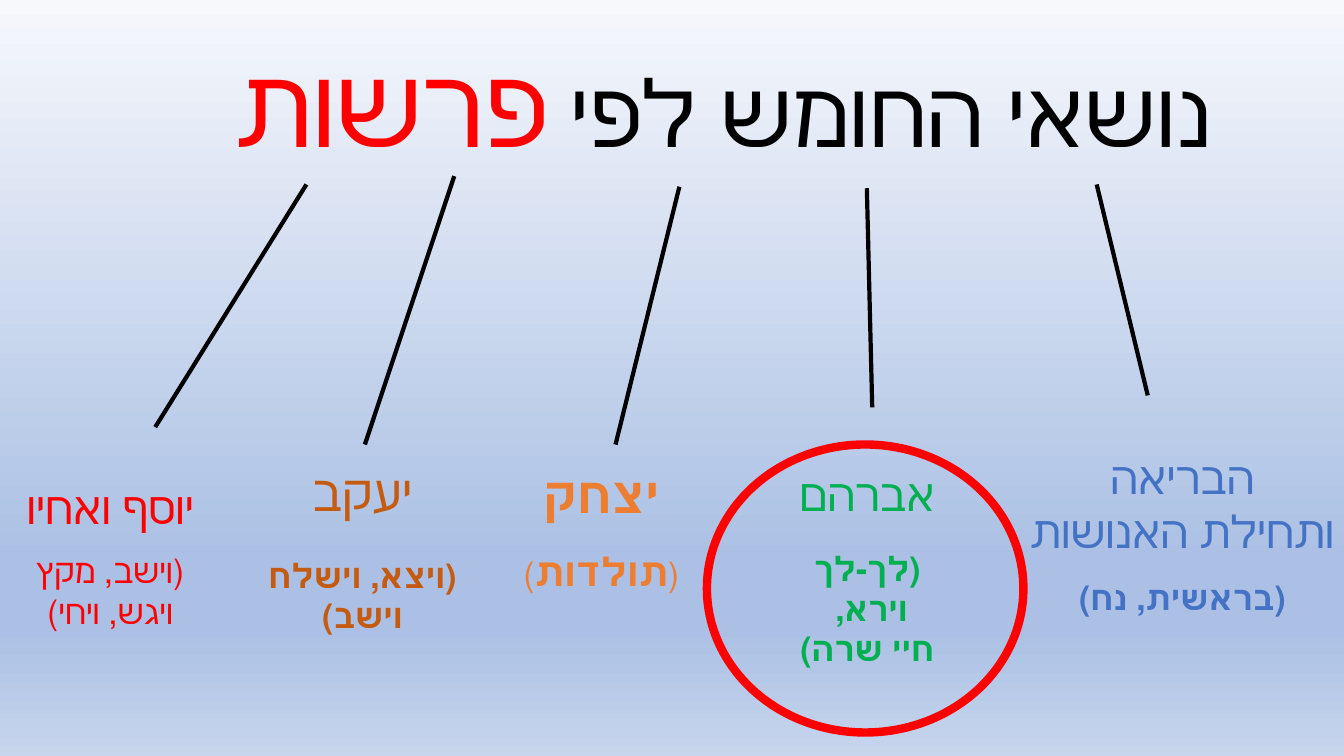
from dataclasses import dataclass

from lxml.etree import SubElement
from pptx import Presentation
from pptx.dml.color import RGBColor
from pptx.enum.lang import MSO_LANGUAGE_ID
from pptx.enum.shapes import MSO_CONNECTOR, MSO_SHAPE
from pptx.enum.text import MSO_AUTO_SIZE, PP_ALIGN
from pptx.oxml.ns import qn
from pptx.util import Inches, Pt

WIDTH, HEIGHT = Inches(13.333), Inches(7.5)
RED, BLACK = "FF0000", "000000"
INSET = 3.6


@dataclass
class Span:
    text: str
    size: float
    color: str
    bold: bool = False


@dataclass
class Line:
    spans: list[Span]
    gap: float = 0


@dataclass
class TextBlock:
    area: tuple[float, float, float, float]
    lines: list[Line]
    font: str = "Lato"
    lead: float = 0


@dataclass
class Ray:
    start: tuple[float, float]
    end: tuple[float, float]


def across(percent: float) -> int:
    """Turn a share of the slide's width into a length."""
    return round(WIDTH * percent / 100)


def down(percent: float) -> int:
    """Turn a share of the slide's height into a length."""
    return round(HEIGHT * percent / 100)


def place(area: tuple[float, float, float, float]) -> tuple[int, int, int, int]:
    """Turn left, top, width and height shares into lengths."""
    left, top, width, height = area
    return across(left), down(top), across(width), down(height)


def color(value: str) -> RGBColor:
    """Read a hex colour."""
    return RGBColor.from_string(value)


def line(text: str, size: float, tint: str, bold: bool = False, gap: float = 0) -> Line:
    """Make a line with a single span."""
    return Line([Span(text, size, tint, bold)], gap)


def paint_background(page, stops: list[tuple[int, str]]) -> None:
    """Fill the page with a vertical gradient."""
    fill = page.background.fill
    fill.gradient()
    fill.gradient_angle = 270
    stop_list = page.background._cSld.find(".//" + qn("a:gsLst"))
    stop_list.clear()
    for percent, tint in stops:
        stop = SubElement(stop_list, qn("a:gs"), pos=str(percent * 1000))
        SubElement(stop, qn("a:srgbClr"), val=str(color(tint)))


def add_text(page, block: TextBlock) -> None:
    """Draw a centred right-to-left text block."""
    box = page.shapes.add_textbox(*place(block.area))
    frame = box.text_frame
    frame.word_wrap = True
    frame.auto_size = MSO_AUTO_SIZE.SHAPE_TO_FIT_TEXT
    frame.margin_top = Pt(INSET + block.lead)
    frame.text = "\n".join("" for _ in block.lines)
    for para, content in zip(frame.paragraphs, block.lines):
        para.alignment = PP_ALIGN.CENTER
        para._p.get_or_add_pPr().set("rtl", "1")
        if content.gap:
            para.space_before = Pt(content.gap)
        for span in content.spans:
            run = para.add_run()
            run.text = span.text
            run.font.name = block.font
            run.font.size = Pt(span.size)
            run.font.bold = span.bold
            run.font.color.rgb = color(span.color)
            run.font.language_id = MSO_LANGUAGE_ID.HEBREW


def add_ray(page, ray: Ray) -> None:
    """Draw a line from the title towards a topic."""
    connector = page.shapes.add_connector(
        MSO_CONNECTOR.STRAIGHT,
        across(ray.start[0]), down(ray.start[1]), across(ray.end[0]), down(ray.end[1]))
    connector.line.color.rgb = color(BLACK)
    connector.line.width = Pt(3)
    SubElement(connector._element.spPr, qn("a:effectLst"))


def add_ring(page, area: tuple[float, float, float, float]) -> None:
    """Draw the red ring around a topic."""
    ring = page.shapes.add_shape(MSO_SHAPE.OVAL, *place(area))
    ring.shadow.inherit = False
    ring.fill.background()
    ring.line.color.rgb = color(RED)
    ring.line.width = Pt(6)


BLUE, ORANGE, GREEN, BROWN = "4472C4", "ED7D31", "00B050", "C55A11"

BACKGROUND = [(0, "F6F8FC"), (74, "ABC0E4"), (83, "ABC0E4"), (100, "C7D5ED")]

BLOCKS = [
    TextBlock((74.85, 58.8, 26.25, 24.4), [
        line(" הבריאה ", 32, BLUE),
        line("ותחילת האנושות", 32, BLUE),
        line("(בראשית, נח)", 24, BLUE, True, 14.4)]),
    TextBlock((35.55, 55.3, 18.4, 24.3), [
        line("יצחק", 36, ORANGE, True),
        Line([Span("(", 24, ORANGE), Span("תולדות", 28, ORANGE, True),
              Span(")", 24, ORANGE)], 16.8)], lead=28.8),
    TextBlock((51.4, 55.3, 26.25, 34.1), [
        line("אברהם", 32, GREEN),
        line("(לך-לך", 24, GREEN, True, 19.2),
        line("וירא, ", 24, GREEN, True),
        line("חיי שרה)", 24, GREEN, True)], lead=31.2),
    TextBlock((17, 52.3, 19.95, 27.3), [
        line("יעקב", 36, BROWN),
        line("(ויצא, וישלח וישב)", 24, BROWN, True, 24)], lead=43.2),
    TextBlock((-1, 62.8, 18.4, 21.6), [
        line("יוסף ואחיו", 32, RED),
        line("(וישב, מקץ", 24, RED, gap=12),
        line("ויגש, ויחי)", 24, RED)]),
    TextBlock((7.9, 4, 90.1, 19.3), [
        Line([Span("נושאי החומש לפי ", 66, BLACK), Span("פרשות", 80, RED),
              Span(" ", 66, BLACK)])],
        font="Calibri"),
]

RAYS = [
    Ray((81.6, 24.4), (85.4, 52.3)),
    Ray((64.5, 24.9), (64.9, 53.9)),
    Ray((50.55, 24.7), (45.8, 58.8)),
    Ray((33.8, 23.3), (27.15, 58.8)),
    Ray((22.8, 24.4), (11.55, 56.5)),
]


def main() -> None:
    """Build the slide and save it."""
    deck = Presentation()
    deck.slide_width, deck.slide_height = WIDTH, HEIGHT
    page = deck.slides.add_slide(deck.slide_layouts[6])
    paint_background(page, BACKGROUND)
    for block in BLOCKS:
        add_text(page, block)
    for ray in RAYS:
        add_ray(page, ray)
    add_ring(page, (52.6, 58.8, 23.55, 38.1))
    deck.save("out.pptx")


if __name__ == "__main__":
    main()
